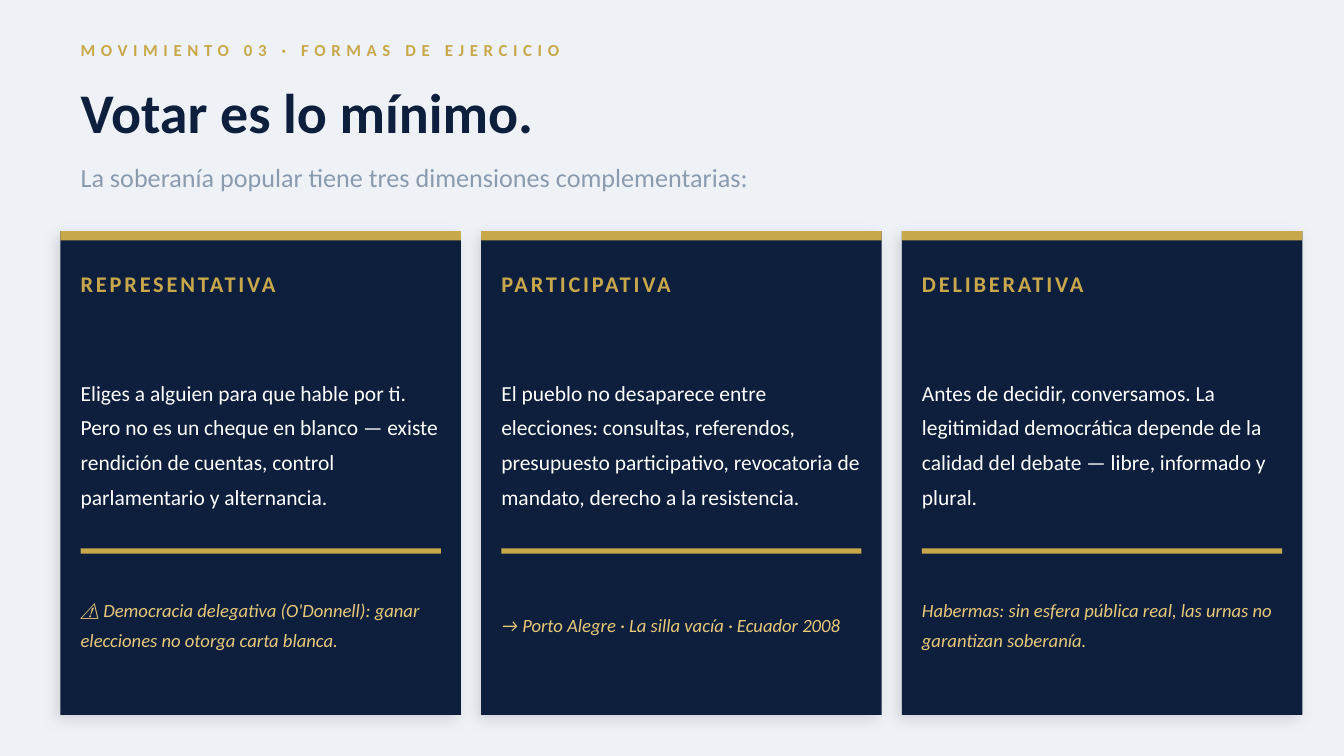
from lxml.etree import SubElement
from pptx import Presentation
from pptx.dml.color import RGBColor
from pptx.enum.shapes import MSO_SHAPE as Shape
from pptx.enum.text import MSO_ANCHOR as Anchor
from pptx.oxml.ns import qn
from pptx.util import Inches, Pt

FONT = "Calibri"
NAVY, GOLD, PALE_GOLD = "0D1F3C", "C9A84C", "E8C97A"
WHITE, GREY, BACKGROUND = "FFFFFF", "8A9BB0", "EEF2F7"

# Card grid, in inches
LEFT, TOP = 0.45, 1.72
CARD_W, CARD_H = 2.98, 3.6
GAP = PAD = 0.15
INNER_W = CARD_W - 2 * PAD
TEXT_LEFT = LEFT + PAD

CARDS = [
    ("REPRESENTATIVA",
     "Eliges a alguien para que hable por ti. Pero no es un cheque en blanco — "
     "existe rendición de cuentas, control parlamentario y alternancia.",
     "⚠ Democracia delegativa (O'Donnell): ganar elecciones no otorga carta blanca."),
    ("PARTICIPATIVA",
     "El pueblo no desaparece entre elecciones: consultas, referendos, "
     "presupuesto participativo, revocatoria de mandato, derecho a la resistencia.",
     "→ Porto Alegre · La silla vacía · Ecuador 2008"),
    ("DELIBERATIVA",
     "Antes de decidir, conversamos. La legitimidad democrática depende de la "
     "calidad del debate — libre, informado y plural.",
     "Habermas: sin esfera pública real, las urnas no garantizan soberanía."),
]


def paint(target, color):
    """Give a fill or a font a solid colour from a hex string."""
    if hasattr(target, "solid"):
        target.solid()
        target.fore_color.rgb = RGBColor.from_string(color)
    else:
        target.color.rgb = RGBColor.from_string(color)


def add_text(s, box, text, size, color, bold=None, italic=None,
             tracking=None, line_spacing=None):
    tf = s.shapes.add_textbox(*map(Inches, box)).text_frame
    tf.word_wrap = True
    tf.vertical_anchor = Anchor.MIDDLE
    tf.margin_left = tf.margin_top = tf.margin_right = tf.margin_bottom = 0
    p = tf.paragraphs[0]
    p.text = text
    if line_spacing:
        p.line_spacing = line_spacing
    r = p.runs[0]
    r.font.name, r.font.size = FONT, Pt(size)
    r.font.bold, r.font.italic = bold, italic
    paint(r.font, color)
    if tracking:
        r.font._element.set("spc", str(int(tracking * 100)))


def add_rect(s, box, color):
    sp = s.shapes.add_shape(Shape.RECTANGLE, *map(Inches, box))
    paint(sp.fill, color)
    sp.line.fill.background()
    sp.shadow.inherit = False
    return sp


def add_soft_shadow(sp):
    effects = sp._element.spPr.find(qn("a:effectLst"))
    shadow = SubElement(effects, qn("a:outerShdw"), blurRad=str(Pt(8)),
                        dist=str(Pt(3)), dir=str(135 * 60000),
                        algn="bl", rotWithShape="0")
    color = SubElement(shadow, qn("a:srgbClr"), val="000000")
    SubElement(color, qn("a:alpha"), val="12000")


def add_card(s, column, title, body, note):
    x = LEFT + column * (CARD_W + GAP)
    inner = x + PAD
    # Panel with its gold top edge
    add_soft_shadow(add_rect(s, (x, TOP, CARD_W, CARD_H), NAVY))
    add_rect(s, (x, TOP, CARD_W, 0.07), GOLD)
    # Title and body
    add_text(s, (inner, 1.9, INNER_W, 0.42), title, 12, GOLD,
             bold=True, tracking=1.5)
    add_text(s, (inner, 2.4, INNER_W, 1.75), body, 11.5, WHITE,
             line_spacing=1.35)
    # Divider and note
    add_rect(s, (inner, 4.08, INNER_W, 0.04), GOLD)
    add_text(s, (inner, 4.15, INNER_W, 0.95), note, 10, PALE_GOLD,
             italic=True, line_spacing=1.3)


def add_header(s):
    add_text(s, (TEXT_LEFT, 0.22, 8.8, 0.3),
             "MOVIMIENTO 03 · FORMAS DE EJERCICIO", 9, GOLD,
             bold=True, tracking=3)
    add_text(s, (TEXT_LEFT, 0.5, 9, 0.65), "Votar es lo mínimo.", 30, NAVY,
             bold=True)
    add_text(s, (TEXT_LEFT, 1.12, 9, 0.4),
             "La soberanía popular tiene tres dimensiones complementarias:",
             14, GREY)


def main():
    prs = Presentation()
    # 16:9 page
    prs.slide_width = Inches(10)
    prs.slide_height = prs.slide_width * 9 // 16
    s = prs.slides.add_slide(prs.slide_layouts[6])
    paint(s.background.fill, BACKGROUND)
    add_header(s)
    for column, card in enumerate(CARDS):
        add_card(s, column, *card)
    prs.save("out.pptx")


if __name__ == "__main__":
    main()
